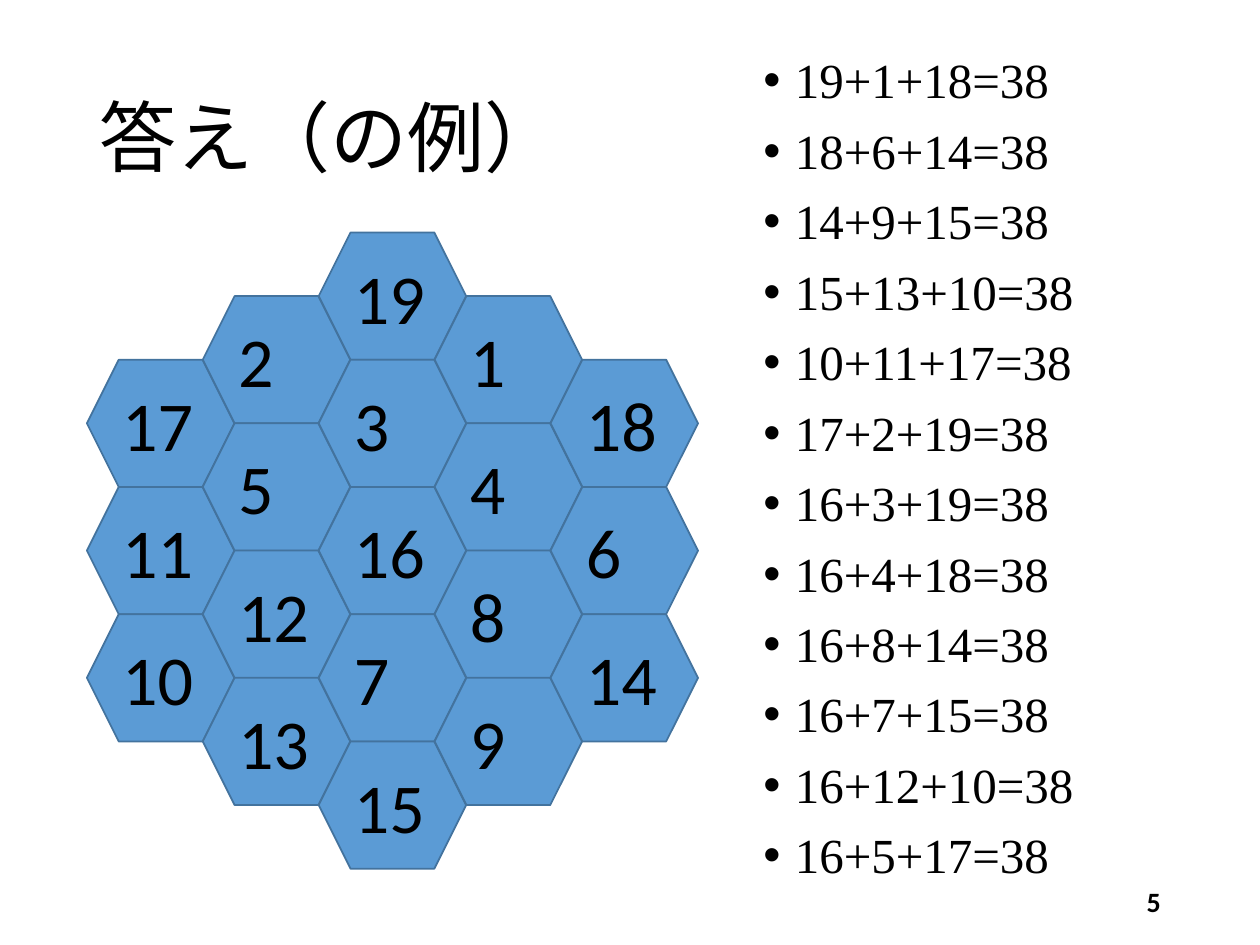
from dataclasses import dataclass

from lxml.etree import SubElement
from pptx import Presentation
from pptx.dml.color import RGBColor
from pptx.enum.lang import MSO_LANGUAGE_ID
from pptx.enum.shapes import MSO_SHAPE
from pptx.enum.text import MSO_ANCHOR, PP_ALIGN
from pptx.oxml.ns import qn
from pptx.util import Inches, Pt


@dataclass(frozen=True)
class Theme:
    text: RGBColor = RGBColor(0x00, 0x00, 0x00)
    cell: RGBColor = RGBColor(0x5B, 0x9B, 0xD5)
    edge: RGBColor = RGBColor(0x43, 0x73, 0x9E)
    serif: str = "Times New Roman"
    sans: str = "Calibri"
    title_size: int = 44
    number_size: int = 40
    sum_size: int = 28
    page_size: int = 16


THEME = Theme()
WIDTH, HEIGHT = 10, 7.5

# Columns of the hexagon board, left to right, each read from the top
BOARD = [
    [17, 11, 10],
    [2, 5, 12, 13],
    [19, 3, 16, 7, 15],
    [1, 4, 8, 9],
    [18, 6, 14],
]
BOARD_LEFT, BOARD_MIDDLE, COLUMN_STEP = 0.69, 4.37, 0.92
CELL_WIDTH, CELL_HEIGHT = 1.17, 1.01

SUMS = [
    (19, 1, 18), (18, 6, 14), (14, 9, 15), (15, 13, 10),
    (10, 11, 17), (17, 2, 19), (16, 3, 19), (16, 4, 18),
    (16, 8, 14), (16, 7, 15), (16, 12, 10), (16, 5, 17),
]


def apply_format(target, values):
    for name, value in values.items():
        setattr(target, name, value)


def write(paragraph, text, size, name, paragraph_format=None, **font_format):
    run = paragraph.add_run()
    run.text = text
    run.font.color.rgb = THEME.text
    apply_format(run.font, {"size": Pt(size), "name": name, **font_format})
    apply_format(paragraph, paragraph_format or {})


def add_text_frame(slide, left, top, width, height, anchor):
    box = slide.shapes.add_textbox(*map(Inches, (left, top, width, height)))
    apply_format(box.text_frame, {"word_wrap": True, "vertical_anchor": anchor})
    return box.text_frame


def add_title(slide, text):
    frame = add_text_frame(slide, 0.69, 0.4, 8.62, 1.45, MSO_ANCHOR.MIDDLE)
    write(frame.paragraphs[0], text, THEME.title_size, THEME.serif,
          {"line_spacing": 0.9}, language_id=MSO_LANGUAGE_ID.JAPANESE)


def add_bullet(paragraph):
    properties = paragraph._p.get_or_add_pPr()
    indent = Inches(0.25)
    properties.set("marL", str(indent))
    properties.set("indent", str(-indent))
    SubElement(properties, qn("a:buFont")).set("typeface", "Arial")
    SubElement(properties, qn("a:buChar")).set("char", "•")


def add_sums(slide):
    frame = add_text_frame(slide, 5.96, 0.4, 3.42, 6.73, MSO_ANCHOR.TOP)
    for index, numbers in enumerate(SUMS):
        paragraph = frame.add_paragraph() if index else frame.paragraphs[0]
        text = "+".join(map(str, numbers)) + f"={sum(numbers)}"
        write(paragraph, text, THEME.sum_size, THEME.serif,
              {"line_spacing": 0.9, "space_before": Pt(10)})
        add_bullet(paragraph)


def add_cell(slide, left, top, number):
    shape = slide.shapes.add_shape(
        MSO_SHAPE.HEXAGON, *map(Inches, (left, top, CELL_WIDTH, CELL_HEIGHT)))
    shape.shadow.inherit = False
    shape.fill.solid()
    shape.fill.fore_color.rgb = THEME.cell
    shape.line.color.rgb = THEME.edge
    shape.line.width = Pt(1)
    apply_format(shape.text_frame,
                 {"word_wrap": True, "vertical_anchor": MSO_ANCHOR.MIDDLE})
    write(shape.text_frame.paragraphs[0], str(number), THEME.number_size,
          THEME.sans, {"alignment": PP_ALIGN.JUSTIFY})


def add_board(slide):
    """Stack each column of cells around one shared horizontal middle."""
    for column, numbers in enumerate(BOARD):
        left = BOARD_LEFT + column * COLUMN_STEP
        top = BOARD_MIDDLE - len(numbers) * CELL_HEIGHT / 2
        for row, number in enumerate(numbers):
            add_cell(slide, left, top + row * CELL_HEIGHT, number)


def add_page_number(slide, number):
    frame = add_text_frame(slide, 7.06, 6.95, 2.25, 0.4, MSO_ANCHOR.MIDDLE)
    write(frame.paragraphs[0], str(number), THEME.page_size, THEME.sans,
          {"alignment": PP_ALIGN.RIGHT}, bold=True)


def main():
    presentation = Presentation()
    apply_format(presentation, {"slide_width": Inches(WIDTH),
                                "slide_height": Inches(HEIGHT)})
    slide = presentation.slides.add_slide(presentation.slide_layouts[6])
    add_title(slide, "答え（の例）")
    add_sums(slide)
    add_board(slide)
    add_page_number(slide, 5)
    presentation.save("out.pptx")


if __name__ == "__main__":
    main()
